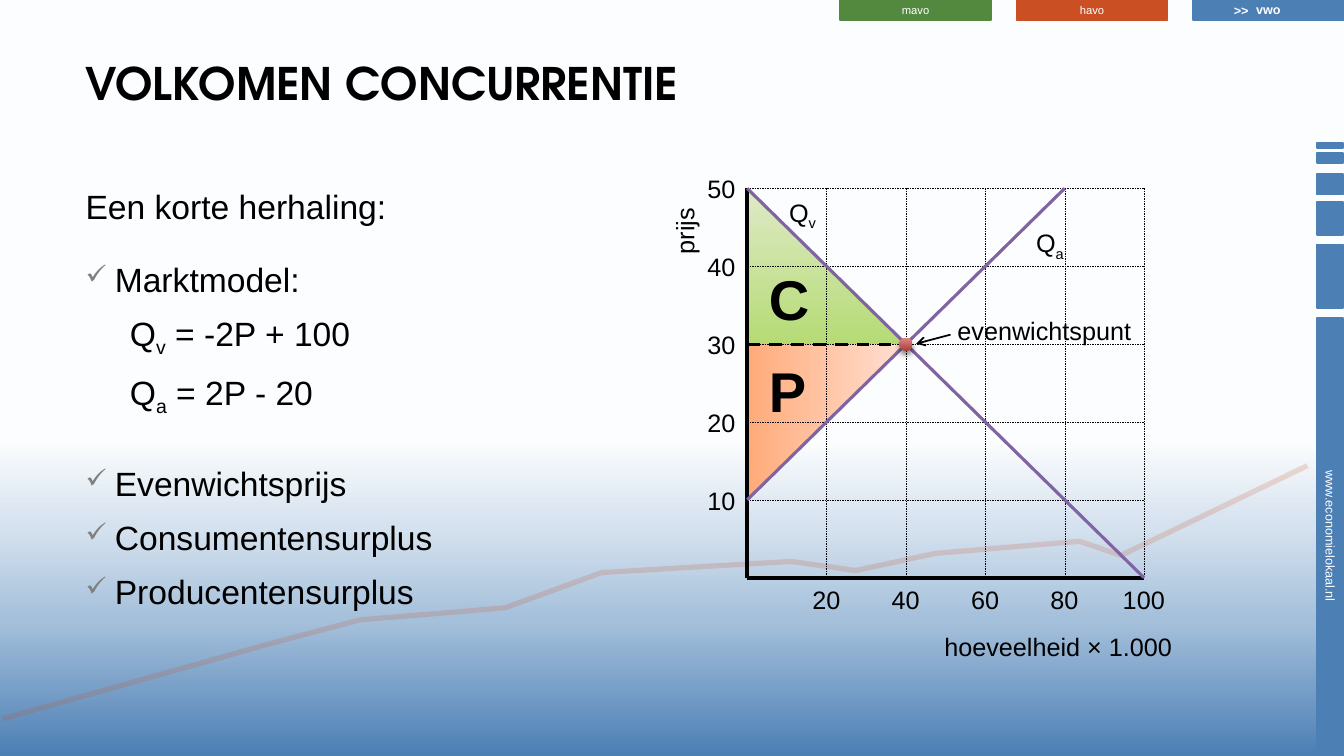
"""Build the slide on perfect competition with its supply and demand diagram."""
from copy import deepcopy
from dataclasses import dataclass

from lxml import etree
from pptx import Presentation
from pptx import util as u
from pptx.dml.color import RGBColor
from pptx.dml.fill import FillFormat
from pptx.enum import dml, shapes, text
from pptx.oxml.ns import qn
from pptx.shapes.autoshape import Shape
from pptx.shapes.connector import Connector
from pptx.slide import Slide
from pptx.text.text import TextFrame, _Paragraph

WIDTH, HEIGHT = u.Inches(13.33), u.Inches(7.5)
COLUMNS, ROWS = 160, 90
AXIS_LEFT, AXIS_BOTTOM = 88.95, 68.78
STEP_ACROSS, STEP_UP = 9.45, 9.27
LABEL_HEIGHT = 4.8

BLACK = RGBColor(0x00, 0x00, 0x00)
WHITE = RGBColor(0xFF, 0xFF, 0xFF)
GRAY = RGBColor(0x80, 0x80, 0x80)
BLUE = RGBColor(0x4C, 0x7F, 0xB4)
ORANGE = RGBColor(0xCA, 0x4F, 0x22)
GREEN = RGBColor(0x52, 0x89, 0x3F)
PURPLE = RGBColor(0x80, 0x64, 0xA2)
PALE_GREEN = RGBColor(0xBE, 0xCE, 0x99)
SKY = [(0, BLUE), (0.18, RGBColor(0xA5, 0xC0, 0xDB)), (0.3, RGBColor(0xD4, 0xE1, 0xEE)),
       (0.42, RGBColor(0xFC, 0xFD, 0xFE)), (0.5, WHITE)]
CONSUMER = [(0, RGBColor(0xDF, 0xEA, 0xC7)), (1, RGBColor(0xB5, 0xDB, 0x75))]
PRODUCER = [(0, RGBColor(0xFF, 0xE0, 0xD3)), (1, RGBColor(0xFF, 0xAB, 0x79))]
DOT = [(0, RGBColor(0xE1, 0x87, 0x85)), (1, RGBColor(0xA7, 0x42, 0x3F))]


@dataclass
class Box:
    """Area as seen on the slide, in grid columns and rows, with its turn in degrees."""
    left: float
    top: float
    width: float
    height: float
    turn: int = 0

    def frame(self) -> tuple[int, int, int, int]:
        """Return the position and size before the turn."""
        width, height = (self.height, self.width) if self.turn else (self.width, self.height)
        left = self.left + (self.width - width) / 2
        top = self.top + (self.height - height) / 2
        return across(left), down(top), across(width), down(height)


@dataclass
class Label:
    """Short text at a place, with an optional subscript."""
    words: str
    box: Box
    subscript: str = ""
    size: float = 18
    bold: bool = False
    color: RGBColor = BLACK


@dataclass
class Tab:
    """Coloured block with an optional caption."""
    box: Box
    color: RGBColor = BLUE
    caption: str = ""
    size: float = 8
    bold: bool = False


@dataclass
class Line:
    """Straight line between two grid points."""
    start: tuple[float, float]
    end: tuple[float, float]
    weight: float
    color: RGBColor = BLACK
    dashed: bool = False


@dataclass
class Item:
    """Body paragraph: pieces alternate between normal and subscript."""
    pieces: list[str]
    before: float = 6.1
    indent: float = 0
    checked: bool = False


def across(columns: float) -> int:
    return round(WIDTH * columns / COLUMNS)


def down(rows: float) -> int:
    return round(HEIGHT * rows / ROWS)


def at(quantity: float, price: float) -> tuple[float, float]:
    """Return the grid point of a quantity and a price in the diagram."""
    return AXIS_LEFT + STEP_ACROSS * quantity / 20, AXIS_BOTTOM - STEP_UP * price / 10


def paint_gradient(fill: FillFormat, stops: list[tuple[float, RGBColor]], angle: int) -> None:
    fill.gradient()
    fill.gradient_angle = angle
    first = fill.gradient_stops[0]._gs
    for _ in stops[2:]:
        first.getparent().append(deepcopy(first))
    for stop, (position, color) in zip(fill.gradient_stops, stops):
        stop.position = position
        stop.color.rgb = color


def set_opacity(shape: Shape, percent: int) -> None:
    color = shape.line._ln.find(".//" + qn("a:srgbClr"))
    etree.SubElement(color, qn("a:alpha"), val=str(percent * 1000))


def write(paragraph: _Paragraph, pieces: list[str], size: float, color: RGBColor = BLACK,
          bold: bool = False, name: str = "Arial") -> None:
    for index, piece in enumerate(pieces):
        run = paragraph.add_run()
        run.text = piece
        run.font.size, run.font.bold, run.font.name = u.Pt(size), bold, name
        run.font.color.rgb = color
        if index % 2:
            run.font._element.set("baseline", "-25000")


def add_shape(slide: Slide, kind: shapes.MSO_SHAPE, box: Box) -> Shape:
    shape = slide.shapes.add_shape(kind, *box.frame())
    shape.rotation = box.turn
    shape.shadow.inherit = False
    shape.line.fill.background()
    return shape


def add_frame(slide: Slide, box: Box, wrap: bool) -> TextFrame:
    shape = slide.shapes.add_textbox(*box.frame())
    shape.rotation = box.turn
    shape.text_frame.word_wrap = wrap
    return shape.text_frame


def add_tab(slide: Slide, tab: Tab) -> None:
    shape = add_shape(slide, shapes.MSO_SHAPE.RECTANGLE, tab.box)
    shape.fill.solid()
    shape.fill.fore_color.rgb = shape.line.color.rgb = tab.color
    shape.line.width = u.Pt(1.25)
    if tab.caption:
        frame = shape.text_frame
        frame.margin_top, frame.margin_bottom = 0, u.Inches(0.01)
        frame.vertical_anchor = text.MSO_ANCHOR.MIDDLE
        frame.paragraphs[0].alignment = text.PP_ALIGN.CENTER
        write(frame.paragraphs[0], [tab.caption], tab.size, WHITE, tab.bold)


def add_label(slide: Slide, label: Label) -> None:
    frame = add_frame(slide, label.box, False)
    frame.auto_size = text.MSO_AUTO_SIZE.SHAPE_TO_FIT_TEXT
    pieces = [label.words, label.subscript] if label.subscript else [label.words]
    write(frame.paragraphs[0], pieces, label.size, label.color, label.bold)


def add_line(slide: Slide, line: Line) -> Connector:
    (x1, y1), (x2, y2) = line.start, line.end
    connector = slide.shapes.add_connector(
        shapes.MSO_CONNECTOR.STRAIGHT, across(x1), down(y1), across(x2), down(y2))
    connector.line.width = u.Pt(line.weight)
    connector.line.color.rgb = line.color
    if line.dashed:
        connector.line.dash_style = dml.MSO_LINE.DASH
    etree.SubElement(connector._element.spPr, qn("a:effectLst"))
    return connector


def add_item(paragraph: _Paragraph, item: Item) -> None:
    paragraph.space_before, paragraph.space_after = u.Pt(item.before), u.Pt(3.4)
    properties = paragraph._p.get_or_add_pPr()
    properties.set("marL", str(u.Inches(item.indent)))
    properties.set("indent", str(-u.Inches(item.indent) if item.checked else 0))
    if item.checked:
        color = etree.SubElement(properties, qn("a:buClr"))
        etree.SubElement(color, qn("a:srgbClr"), val=str(GRAY))
        etree.SubElement(properties, qn("a:buSzPct"), val="80000")
        etree.SubElement(properties, qn("a:buChar"), char="✓")
    write(paragraph, item.pieces, 24)


def draw_frame(slide: Slide) -> None:
    """Draw the background, the level tabs, the side bars and the trend line."""
    paint_gradient(slide.background.fill, SKY, 90)
    bars = [(16.98, 0.6), (18.24, 1.2), (20.76, 2.4), (24.06, 3.96), (29.1, 7.56)]
    for top, length in bars:
        add_tab(slide, Tab(Box(156.78, top, 3.12, length, 90)))
    add_tab(slide, Tab(Box(156.78, 37.86, 3.12, 51.96, 90), BLUE, "www.economielokaal.nl", 9))
    levels = [("mavo", GREEN, 8), ("havo", ORANGE, 8), ("vwo", BLUE, 9)]
    for index, (level, color, size) in enumerate(levels):
        add_tab(slide, Tab(Box(100 + 21 * index, 0, 18, 2.4), color, level, size, level == "vwo"))
    add_label(slide, Label(">>", Box(145.7, -0.24, 4.2, 3), size=9, bold=True, color=WHITE))
    trend = [(0.36, 85.56), (32.4, 76.56), (42.84, 73.8), (60.12, 72.36), (71.64, 68.16),
             (94.2, 66.84), (101.88, 67.92), (111.36, 65.88), (128.52, 64.44),
             (133.44, 66.12), (155.64, 55.44)]
    points = [(across(x), down(y)) for x, y in trend]
    builder = slide.shapes.build_freeform(*points[0])
    builder.add_line_segments(points[1:], close=False)
    curve = builder.convert_to_shape()
    curve.shadow.inherit = False
    curve.fill.background()
    curve.line.color.rgb, curve.line.width = ORANGE, u.Pt(3.75)
    set_opacity(curve, 19)


def draw_text(slide: Slide) -> None:
    """Write the title and the list."""
    title = add_frame(slide, Box(9, 6, 120.24, 10.68), True)
    write(title.paragraphs[0], ["VOLKOMEN CONCURRENTIE"], 32, bold=True, name="TeX Gyre Adventor")
    items = [Item(["Een korte herhaling:"], 0),
             Item(["Marktmodel:"], 20.4, 0.29, True),
             Item(["Q", "v", " = -2P + 100"], indent=0.44),
             Item(["Q", "a", " = 2P - 20"], indent=0.44),
             Item(["Evenwichtsprijs"], 29, 0.29, True),
             Item(["Consumentensurplus"], indent=0.29, checked=True),
             Item(["Producentensurplus"], indent=0.29, checked=True)]
    body = add_frame(slide, Box(9, 21.5, 64.8, 61.8), True)
    for index, item in enumerate(items):
        add_item(body.add_paragraph() if index else body.paragraphs[0], item)


def draw_diagram(slide: Slide) -> None:
    """Draw the surplus areas, the grid, the curves, the labels and the equilibrium."""
    for price, turn, stops in [(50, 0, CONSUMER), (30, 90, PRODUCER)]:
        area = Box(*at(0, price), 2 * STEP_ACROSS, 2 * STEP_UP, turn)
        triangle = add_shape(slide, shapes.MSO_SHAPE.RIGHT_TRIANGLE, area)
        paint_gradient(triangle.fill, stops, 270)
        if stops is CONSUMER:
            triangle.line.color.rgb, triangle.line.width = PALE_GREEN, u.Pt(0.75)
            set_opacity(triangle, 60)
    lines = [Line(at(0, 50), at(0, 0), 3), Line(at(100, 0), at(0, 0), 3)]
    lines += [Line(at(0, price), at(100, price), 0.25, dashed=True) for price in range(50, 0, -10)]
    lines += [Line(at(amount, 50), at(amount, 0), 0.25, dashed=True) for amount in range(20, 101, 20)]
    lines += [Line(at(0, 50), at(100, 0), 2.25, PURPLE), Line(at(0, 10), at(80, 50), 2.25, PURPLE),
              Line(at(0, 30), at(40, 30), 2.25, dashed=True)]
    for line in lines:
        add_line(slide, line)
    labels = [Label("hoeveelheid × 1.000", Box(111.24, 74.52, 29.76, LABEL_HEIGHT)),
              Label("prijs", Box(79.08, 23.52, LABEL_HEIGHT, 7.92, 270)),
              Label("Q", Box(92.76, 22.92, 5.76, LABEL_HEIGHT), "v"),
              Label("Q", Box(122.16, 26.52, 5.88, LABEL_HEIGHT), "a"),
              Label("evenwichtspunt", Box(112.8, 36.96, 23.28, LABEL_HEIGHT)),
              Label("P", Box(90.36, 41.88, 6.96, 9.24), size=40, bold=True),
              Label("C", Box(90.36, 30.96, 7.32, 9.24), size=40, bold=True)]
    for price in range(10, 51, 10):
        labels.append(Label(str(price), Box(83.04, at(0, price)[1] - 2.33, 5.76, LABEL_HEIGHT)))
    for amount in range(20, 101, 20):
        width = 2.4 + 1.68 * len(str(amount))
        labels.append(Label(str(amount), Box(at(amount, 0)[0] - width / 2, 69, width, LABEL_HEIGHT)))
    for label in labels:
        add_label(slide, label)
    x, y = at(40, 30)
    dot = add_shape(slide, shapes.MSO_SHAPE.OVAL, Box(x - 0.78, y - 0.78, 1.56, 1.56))
    paint_gradient(dot.fill, DOT, 270)
    shadow = etree.SubElement(dot._element.spPr.find(qn("a:effectLst")), qn("a:outerShdw"),
                              blurRad=str(u.Pt(4)), dist=str(u.Pt(3)), dir="5400000", rotWithShape="0")
    shade = etree.SubElement(shadow, qn("a:srgbClr"), val=str(BLACK))
    etree.SubElement(shade, qn("a:alpha"), val="46000")
    pointer = add_line(slide, Line((113.16, 39.84), (109.08, 40.92), 1.25))
    etree.SubElement(pointer.line._ln, qn("a:tailEnd"), type="arrow")


def main() -> None:
    presentation = Presentation()
    presentation.slide_width, presentation.slide_height = WIDTH, HEIGHT
    slide = presentation.slides.add_slide(presentation.slide_layouts[6])
    draw_frame(slide)
    draw_text(slide)
    draw_diagram(slide)
    presentation.save("out.pptx")


if __name__ == "__main__":
    main()
